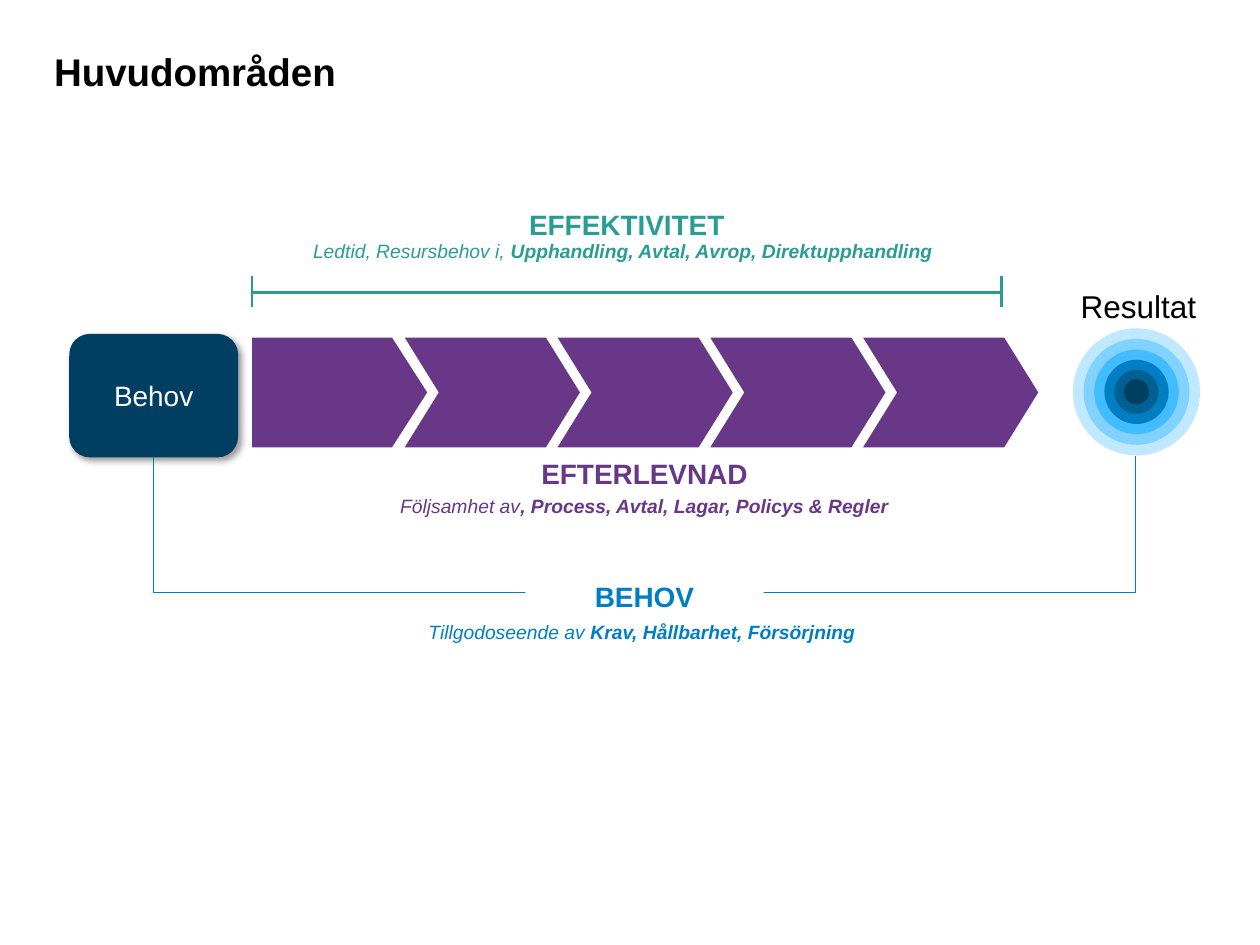
from lxml.etree import SubElement
from pptx import Presentation
from pptx.dml.color import RGBColor
from pptx.enum.shapes import MSO_CONNECTOR, MSO_SHAPE
from pptx.enum.text import MSO_ANCHOR, PP_ALIGN
from pptx.oxml.ns import qn
from pptx.util import Inches, Pt

TEAL, PURPLE, BLUE, NAVY = "289D93", "683788", "007EC4", "003F62"
WHITE, BLACK = "FFFFFF", "000000"


def paint(color, value):
    """Set a colour format from a hex string."""
    color.rgb = RGBColor.from_string(value)


def write(shape, text, size=16, color=BLACK, bold=False, italic=False,
          align=PP_ALIGN.CENTER):
    """Append a formatted run to the first paragraph of a shape."""
    para = shape.text_frame.paragraphs[0]
    para.alignment = align
    run = para.add_run()
    run.text = text
    font = run.font
    font.name, font.size, font.bold, font.italic = "Arial", Pt(size), bold, italic
    paint(font.color, color)


def add_box(slide, left, top, width, height, wrap=True):
    """Add an empty text box."""
    box = slide.shapes.add_textbox(*map(Inches, (left, top, width, height)))
    box.text_frame.word_wrap = wrap
    return box


def add_form(parent, kind, left, top, width, height, fill):
    """Add a filled preset shape without outline or shadow."""
    form = parent.shapes.add_shape(kind, *map(Inches, (left, top, width, height)))
    form.shadow.inherit = False
    form.fill.solid()
    paint(form.fill.fore_color, fill)
    form.line.fill.background()
    return form


def add_line(parent, start, end, color, width, kind=MSO_CONNECTOR.STRAIGHT):
    """Add a connector without shadow."""
    line = parent.shapes.add_connector(kind, *map(Inches, start + end))
    paint(line.line.color, color)
    line.line.width = Pt(width)
    SubElement(line._element.spPr, qn("a:effectLst"))
    return line


def add_detail(slide, left, top, lead, terms, color):
    """Add an italic line whose key terms are bold."""
    box = add_box(slide, left, top, 5.95, 0.44)
    write(box, lead, size=11, color=color, italic=True)
    write(box, terms, size=11, color=color, italic=True, bold=True)


def add_target(slide, mid_x, mid_y):
    """Add the concentric rings of the result."""
    rings = ((1.01, "C0E9FF"), (0.84, "81D2FF"), (0.67, "43BCFF"),
             (0.51, BLUE), (0.35, "005F93"), (0.2, NAVY))
    for size, fill in rings:
        add_form(slide, MSO_SHAPE.OVAL, mid_x - size / 2, mid_y - size / 2,
                 size, size, fill)


def add_chain(slide):
    """Add the row of process arrows as a group."""
    group = slide.shapes.add_group_shape()
    for step in range(5):
        kind = MSO_SHAPE.CHEVRON if step else MSO_SHAPE.PENTAGON
        arrow = add_form(group, kind, 2 + step * 1.2125, 2.68, 1.39, 0.87, PURPLE)
        arrow.adjustments[0] = 0.31 if step else 0.32


def add_span(slide, left, right, mid):
    """Add a measuring line with end ticks as a group."""
    group = slide.shapes.add_group_shape()
    add_line(group, (left, mid), (right, mid), TEAL, 1.5)
    for end in (left, right):
        add_line(group, (end, 2.19), (end, 2.44), TEAL, 1.5)


def add_need(slide):
    """Add the rounded start box with its soft shadow."""
    need = add_form(slide, MSO_SHAPE.ROUNDED_RECTANGLE, 0.55, 2.65, 1.34, 0.98, NAVY)
    need.text_frame.vertical_anchor = MSO_ANCHOR.MIDDLE
    write(need, "Behov", color=WHITE)
    effects = need._element.spPr.find(qn("a:effectLst"))
    shade = SubElement(effects, qn("a:outerShdw"), blurRad=str(Pt(4)),
                       dist=str(Pt(3)), dir="2700000", algn="tl", rotWithShape="0")
    tint = SubElement(shade, qn("a:srgbClr"), val=BLACK)
    SubElement(tint, qn("a:alpha"), val="40000")


def add_loop(slide):
    """Add the bent connector that runs below from need to result."""
    loop = add_line(slide, (5.12, 7.52), (5.11, -0.27), BLUE, 0.75,
                    MSO_CONNECTOR.ELBOW)
    loop._element.spPr.find(qn("a:xfrm")).set("rot", "5400000")
    geom = loop._element.spPr.find(qn("a:prstGeom"))
    guides = geom.find(qn("a:avLst"))
    SubElement(guides, qn("a:gd"), name="adj1", fmla="val -10900000")


def main():
    """Build and save the slide."""
    deck = Presentation()
    deck.slide_width, deck.slide_height = Inches(10), Inches(7.5)
    slide = deck.slides.add_slide(deck.slide_layouts[6])

    title = add_box(slide, 0.43, 0.33, 9.14, 0.82)
    title.text_frame.margin_left = 0
    write(title, "Huvudområden", size=22, bold=True, align=PP_ALIGN.LEFT)

    add_chain(slide)
    write(add_box(slide, 2.02, 3.57, 6.19, 0.39), "EFTERLEVNAD",
          color=PURPLE, bold=True)
    add_need(slide)
    add_span(slide, 2, 7.95, 2.32)
    add_detail(slide, 1.97, 1.85, "Ledtid, Resursbehov i, ",
               "Upphandling, Avtal, Avrop, Direktupphandling", TEAL)
    add_loop(slide)
    label = add_form(slide, MSO_SHAPE.RECTANGLE, 4.17, 4.55, 1.89, 0.32, WHITE)
    label.text_frame.vertical_anchor = MSO_ANCHOR.TOP
    write(label, "BEHOV", color=BLUE, bold=True)
    add_target(slide, 9.02, 3.11)
    write(add_box(slide, 8.47, 2.23, 1.13, 0.4, wrap=False), "Resultat", size=18)
    write(add_box(slide, 1.88, 1.6, 6.19, 0.39), "EFFEKTIVITET",
          color=TEAL, bold=True)
    add_detail(slide, 2.14, 3.87, "Följsamhet av",
               ", Process, Avtal, Lagar, Policys & Regler", PURPLE)
    add_detail(slide, 2.12, 4.87, "Tillgodoseende av ",
               "Krav, Hållbarhet, Försörjning", BLUE)
    deck.save("out.pptx")


if __name__ == "__main__":
    main()
